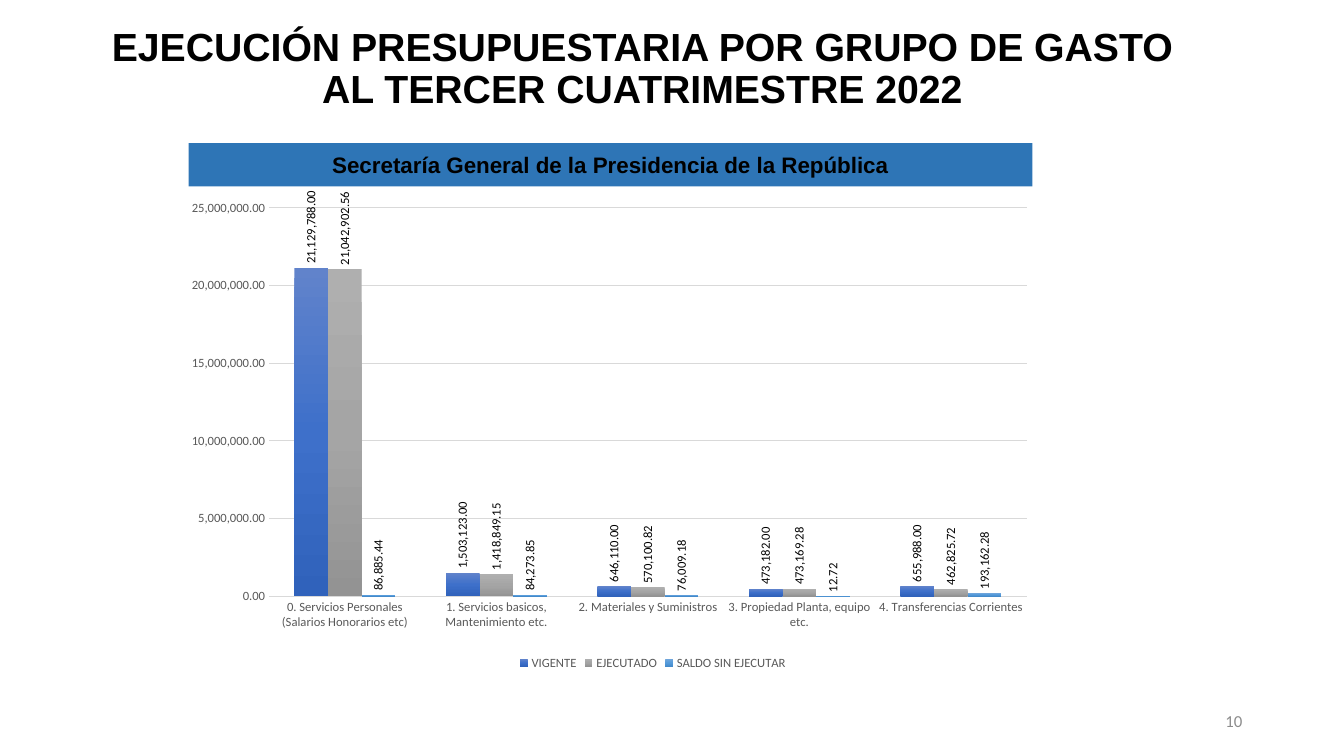
from pptx import Presentation
from pptx.chart.data import CategoryChartData
from pptx.dml.color import RGBColor
from pptx.enum.chart import XL_CHART_TYPE, XL_LABEL_POSITION, XL_LEGEND_POSITION, XL_TICK_MARK
from pptx.enum.shapes import MSO_SHAPE
from pptx.enum.text import MSO_ANCHOR, PP_ALIGN
from pptx.oxml import parse_xml
from pptx.oxml.ns import nsdecls, qn
from pptx.util import Inches, Pt

TITLE = ["EJECUCIÓN PRESUPUESTARIA POR GRUPO DE GASTO", "AL TERCER CUATRIMESTRE 2022"]
BANNER = "Secretaría General de la Presidencia de la República"
PAGE = "10"
GROUPS = [
    "0. Servicios Personales (Salarios Honorarios etc)",
    "1. Servicios basicos, Mantenimiento etc.",
    "2. Materiales y Suministros",
    "3. Propiedad Planta, equipo etc.",
    "4. Transferencias Corrientes",
]
# name, values, gradient from top to bottom
SERIES = [
    ("VIGENTE", (21129788, 1503123, 646110, 473182, 655988),
     ("6183CB", "3E70CA", "3062BB")),
    ("EJECUTADO", (21042902.56, 1418849.15, 570100.82, 473169.28, 462825.72),
     ("AFAFAF", "A5A5A5", "939393")),
    ("SALDO SIN EJECUTAR", (86885.44, 84273.85, 76009.18, 12.72, 193162.28),
     ("71A6DB", "559BDB", "448ACA")),
]
MONEY = "#,##0.00"
COLORS = {"black": "000000", "banner": "2E75B6", "axis": "595959",
          "rule": "D9D9D9", "page": "8C8C8C"}
BOXES = {
    "title": (0.84, 0.24, 11.06, 0.9),
    "chart": (1.57, 1.39, 9.81, 5.3),
    "banner": (1.87, 1.42, 8.37, 0.43),
    "page": (9.42, 6.95, 3, 0.4),
}
PLOT = {"x": 0.112, "y": 0.127, "w": 0.766, "h": 0.727}
FONTS = {
    "title": {"name": "Arial", "size": Pt(28), "bold": True},
    "banner": {"name": "Arial", "size": Pt(16), "bold": True},
    "chart": {"name": "Calibri", "size": Pt(10), "bold": False},
    "small": {"name": "Calibri", "size": Pt(9), "bold": False},
    "page": {"name": "Calibri", "size": Pt(12), "bold": False},
}


def rgb(name):
    return RGBColor.from_string(COLORS[name])


def box(name):
    return [Inches(v) for v in BOXES[name]]


def set_font(font, style, color):
    for key, value in FONTS[style].items():
        setattr(font, key, value)
    font.color.rgb = rgb(color)


def write(shape, lines, style, color, align, spacing=1.0):
    tf = shape.text_frame
    tf.word_wrap = True
    tf.vertical_anchor = MSO_ANCHOR.MIDDLE
    for i, line in enumerate(lines):
        p = tf.paragraphs[0] if i == 0 else tf.add_paragraph()
        p.alignment, p.line_spacing = align, spacing
        r = p.add_run()
        r.text = line
        set_font(r.font, style, color)


def fill_gradient(series, colors):
    """Fill the bars with evenly spaced colours running downwards."""
    series.format.fill.solid()
    solid = series.format._element.find(qn("c:spPr")).find(qn("a:solidFill"))
    step = 100000 // (len(colors) - 1)
    stops = "".join(f'<a:gs pos="{i * step}"><a:srgbClr val="{c}"/></a:gs>'
                    for i, c in enumerate(colors))
    solid.getparent().replace(solid, parse_xml(
        f'<a:gradFill {nsdecls("a")} rotWithShape="1"><a:gsLst>{stops}</a:gsLst>'
        '<a:lin ang="5400000" scaled="0"/></a:gradFill>'))


def fix_plot_area(chart):
    """Pin the inner plot area to fixed shares of the chart frame."""
    area = chart._chartSpace.chart.plotArea
    for old in area.findall(qn("c:layout")):
        area.remove(old)
    sizes = "".join(f'<c:{k} val="{v}"/>' for k, v in PLOT.items())
    area.insert(0, parse_xml(
        f'<c:layout {nsdecls("c")}><c:manualLayout><c:layoutTarget val="inner"/>'
        f'<c:xMode val="edge"/><c:yMode val="edge"/>{sizes}</c:manualLayout></c:layout>'))


def add_budget_chart(s):
    data = CategoryChartData(number_format=MONEY)
    data.categories = GROUPS
    for name, values, _ in SERIES:
        data.add_series(name, values)
    chart = s.shapes.add_chart(XL_CHART_TYPE.COLUMN_CLUSTERED, *box("chart"), data).chart
    set_font(chart.font, "chart", "black")
    chart.has_title = False
    chart.has_legend = True
    chart.legend.position = XL_LEGEND_POSITION.BOTTOM
    chart.legend.include_in_layout = False
    set_font(chart.legend.font, "small", "axis")

    cat, val = chart.category_axis, chart.value_axis
    for axis in (cat, val):
        axis.major_tick_mark = axis.minor_tick_mark = XL_TICK_MARK.NONE
        set_font(axis.tick_labels.font, "small", "axis")
    cat.format.line.color.rgb = rgb("rule")
    cat.format.line.width = Pt(1)
    val.format.line.fill.background()
    val.minimum_scale, val.maximum_scale, val.major_unit = 0, 25_000_000, 5_000_000
    val.tick_labels.number_format = MONEY
    val.tick_labels.number_format_is_linked = False
    val.major_gridlines.format.line.color.rgb = rgb("rule")
    val.major_gridlines.format.line.width = Pt(0.75)

    plot = chart.plots[0]
    plot.gap_width, plot.overlap, plot.vary_by_categories = 150, 0, False
    for series, (_, _, colors) in zip(plot.series, SERIES):
        series.invert_if_negative = False
        fill_gradient(series, colors)
        labels = series.data_labels
        labels.show_value = True
        labels.number_format, labels.number_format_is_linked = MONEY, False
        labels.position = XL_LABEL_POSITION.OUTSIDE_END
        set_font(labels.font, "small", "black")
        body = labels._element.find(qn("c:txPr")).find(qn("a:bodyPr"))
        body.set("rot", "-5400000")
        body.set("vert", "horz")
    fix_plot_area(chart)


def main():
    prs = Presentation()
    prs.slide_width, prs.slide_height = Inches(13.33), Inches(7.5)
    s = prs.slides.add_slide(prs.slide_layouts[5])

    title = s.shapes.title
    title.left, title.top, title.width, title.height = box("title")
    write(title, TITLE, "title", "black", PP_ALIGN.CENTER, 0.9)

    add_budget_chart(s)

    banner = s.shapes.add_shape(MSO_SHAPE.RECTANGLE, *box("banner"))
    banner.shadow.inherit = False
    banner.fill.solid()
    banner.fill.fore_color.rgb = rgb("banner")
    banner.line.fill.background()
    write(banner, [BANNER], "banner", "black", PP_ALIGN.CENTER)

    page = s.shapes.add_textbox(*box("page"))
    write(page, [PAGE], "page", "page", PP_ALIGN.RIGHT)

    prs.save("out.pptx")


if __name__ == "__main__":
    main()
